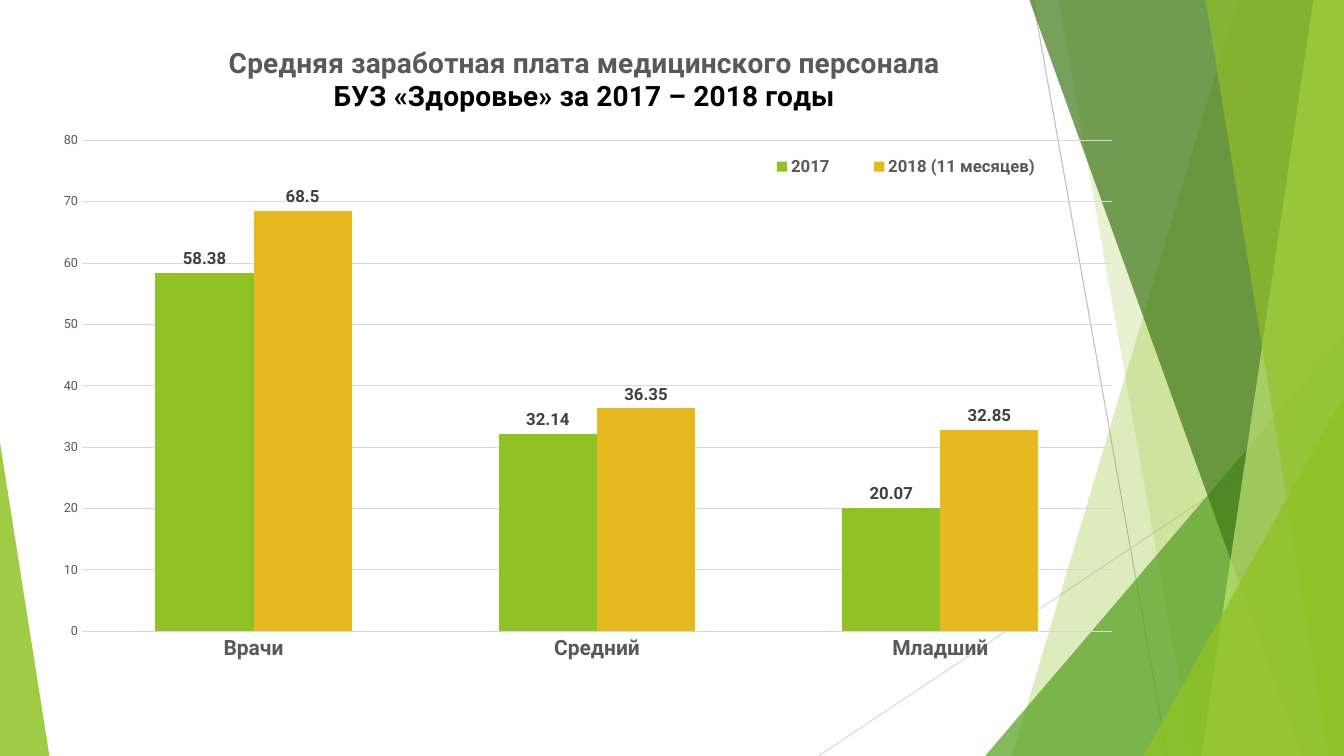
from lxml import etree
from pptx import Presentation
from pptx.chart.data import CategoryChartData
from pptx.dml.color import RGBColor
from pptx.enum.chart import XL_CHART_TYPE, XL_LABEL_POSITION, XL_LEGEND_POSITION, XL_TICK_MARK
from pptx.enum.shapes import MSO_CONNECTOR, MSO_SHAPE
from pptx.oxml import parse_xml
from pptx.oxml.ns import nsdecls, qn
from pptx.util import Pt

COLUMNS = XL_CHART_TYPE.COLUMN_CLUSTERED
OUTSIDE_END = XL_LABEL_POSITION.OUTSIDE_END
LEGEND_BOTTOM = XL_LEGEND_POSITION.BOTTOM
NO_TICKS = XL_TICK_MARK.NONE
STRAIGHT = MSO_CONNECTOR.STRAIGHT
TRIANGLE = MSO_SHAPE.ISOSCELES_TRIANGLE

FONT = "Roboto"
COLORS = {
    "lime": "90C226", "green": "54A021", "forest": "3F7819", "pale": "C0E474",
    "gold": "E6B91E", "line": "BFBFBF", "grid": "D9D9D9",
    "text": "595959", "label": "404040", "black": "000000",
}
PAGE_BOX = (0, 0, 960, 540)
CHART_BOX = (30.24, 16.56, 779.76, 490.32)
TITLE_SPOT = (131, 13.5)
PLOT_BOX = (28.3, 83.8, 735.9, 350.6)
LEGEND_BOX = (497, 90.5, 240, 24)

TITLE_LINES = [
    ("Средняя заработная плата медицинского персонала", "text"),
    ("БУЗ «Здоровье» за 2017 – 2018 годы", "black"),
]
CATEGORIES = ["Врачи", "Средний", "Младший"]
SERIES = [
    ("2017", [58.38, 32.14, 20.07], "lime"),
    ("2018 (11 месяцев)", [68.5, 36.35, 32.85], "gold"),
]


def rgb(name):
    return RGBColor.from_string(COLORS[name])


def style_font(font, size, color, bold=False):
    font.name = FONT
    font.size = Pt(size)
    font.bold = bold
    font.color.rgb = rgb(color)


def style_line(line, color):
    line.color.rgb = rgb(color)
    line.width = Pt(0.75)


def style_facet(shape, color, opacity):
    shape.shadow.inherit = False
    shape.line.fill.background()
    shape.fill.solid()
    shape.fill.fore_color.rgb = rgb(color)
    tint = shape._element.spPr.find(qn("a:solidFill"))[0]
    etree.SubElement(tint, qn("a:alpha"), val=str(opacity * 1000))


def add_ray(page, start, end, color):
    ray = page.shapes.add_connector(STRAIGHT, *(Pt(value) for value in start + end))
    style_line(ray.line, color)
    etree.SubElement(ray._element.spPr, qn("a:effectLst"))


def add_band(page, box, top_x, bottom_x, color, opacity):
    left, top, width, height = box
    right, bottom = left + width, top + height
    corners = [(left + top_x, top - 0.6), (right, top - 0.6), (right, bottom), (left + bottom_x, bottom)]
    corners = [(Pt(x), Pt(y)) for x, y in corners]
    builder = page.shapes.build_freeform(*corners[0])
    builder.add_line_segments(corners[1:], close=True)
    style_facet(builder.convert_to_shape(), color, opacity)


def add_corner(page, box, width, height, peak, color, opacity):
    left, top, box_width, box_height = box
    x = left + peak * (box_width - width)
    y = top + box_height - height
    corner = page.shapes.add_shape(TRIANGLE, Pt(x), Pt(y), Pt(width), Pt(height))
    corner.adjustments[0] = peak
    style_facet(corner, color, opacity)


def add_facets(page, box):
    left, top, width, height = box
    bottom = top + height
    add_ray(page, (left + 738, top), (left + 833.8, bottom), "line")
    add_ray(page, (left + width, top + 290.2), (left + 584.6, bottom), "grid")
    add_band(page, box, 884.2, 722.9, "lime", 30)
    add_band(page, box, 756, 851.8, "lime", 20)
    add_corner(page, box, 256.3, 300.2, 1, "green", 72)
    add_band(page, box, 735.1, 929.5, "forest", 70)
    add_band(page, box, 938.2, 858.2, "pale", 70)
    add_band(page, box, 861.1, 949, "lime", 65)
    add_corner(page, box, 143.3, 257, 1, "lime", 80)
    add_corner(page, box, 35.3, 223.9, 0, "lime", 85)


def place_part(part, chart_box, part_box, inner=False):
    chart_sizes = chart_box[2:] * 2
    target = '<c:layoutTarget val="inner"/>' if inner else ""
    modes = '<c:xMode val="edge"/><c:yMode val="edge"/>'
    sizes = "".join(
        f'<c:{tag} val="{length / whole}"/>'
        for tag, length, whole in zip("xywh", part_box, chart_sizes)
    )
    layout = parse_xml(
        f'<c:layout {nsdecls("c")}><c:manualLayout>{target}{modes}{sizes}'
        "</c:manualLayout></c:layout>"
    )
    for old in part.findall(qn("c:layout")):
        part.remove(old)
    leading = [child for child in part if child.tag in (qn("c:tx"), qn("c:legendPos"))]
    part.insert(len(leading), layout)


def style_title(chart, chart_box):
    chart.has_title = True
    title = chart.chart_title
    title.text_frame.text = "\n".join(text for text, color in TITLE_LINES)
    for para, (text, color) in zip(title.text_frame.paragraphs, TITLE_LINES):
        style_font(para.runs[0].font, 20, color, True)
    title.include_in_layout = False
    place_part(title._element, chart_box, TITLE_SPOT)


def style_axes(chart):
    category_axis, value_axis = chart.category_axis, chart.value_axis
    for axis in (category_axis, value_axis):
        axis.major_tick_mark = axis.minor_tick_mark = NO_TICKS
    style_font(category_axis.tick_labels.font, 15, "text", True)
    style_line(category_axis.format.line, "grid")
    style_font(value_axis.tick_labels.font, 9, "text")
    value_axis.format.line.fill.background()
    value_axis.minimum_scale, value_axis.maximum_scale = 0, 80
    value_axis.major_unit = 10
    style_line(value_axis.major_gridlines.format.line, "grid")


def style_columns(plot):
    plot.vary_by_categories = False
    plot.gap_width = 150
    plot.overlap = 0
    for series, (name, values, color) in zip(plot.series, SERIES):
        series.format.fill.solid()
        series.format.fill.fore_color.rgb = rgb(color)
        labels = series.data_labels
        labels.show_value = True
        labels.position = OUTSIDE_END
        style_font(labels.font, 12, "label", True)


def add_salary_chart(page, box):
    data = CategoryChartData()
    data.categories = CATEGORIES
    for name, values, color in SERIES:
        data.add_series(name, values)
    chart = page.shapes.add_chart(COLUMNS, *(Pt(value) for value in box), data).chart
    style_font(chart.font, 10, "black")
    style_title(chart, box)
    style_axes(chart)
    style_columns(chart.plots[0])
    place_part(chart._chartSpace.chart.plotArea, box, PLOT_BOX, inner=True)

    chart.has_legend = True
    chart.legend.position = LEGEND_BOTTOM
    chart.legend.include_in_layout = False
    style_font(chart.legend.font, 12, "text", True)
    place_part(chart.legend._element, box, LEGEND_BOX)


def main():
    deck = Presentation()
    deck.slide_width, deck.slide_height = Pt(960), Pt(540)
    page = deck.slides.add_slide(deck.slide_layouts[6])
    add_facets(page, PAGE_BOX)
    add_salary_chart(page, CHART_BOX)
    deck.save("out.pptx")


if __name__ == "__main__":
    main()
